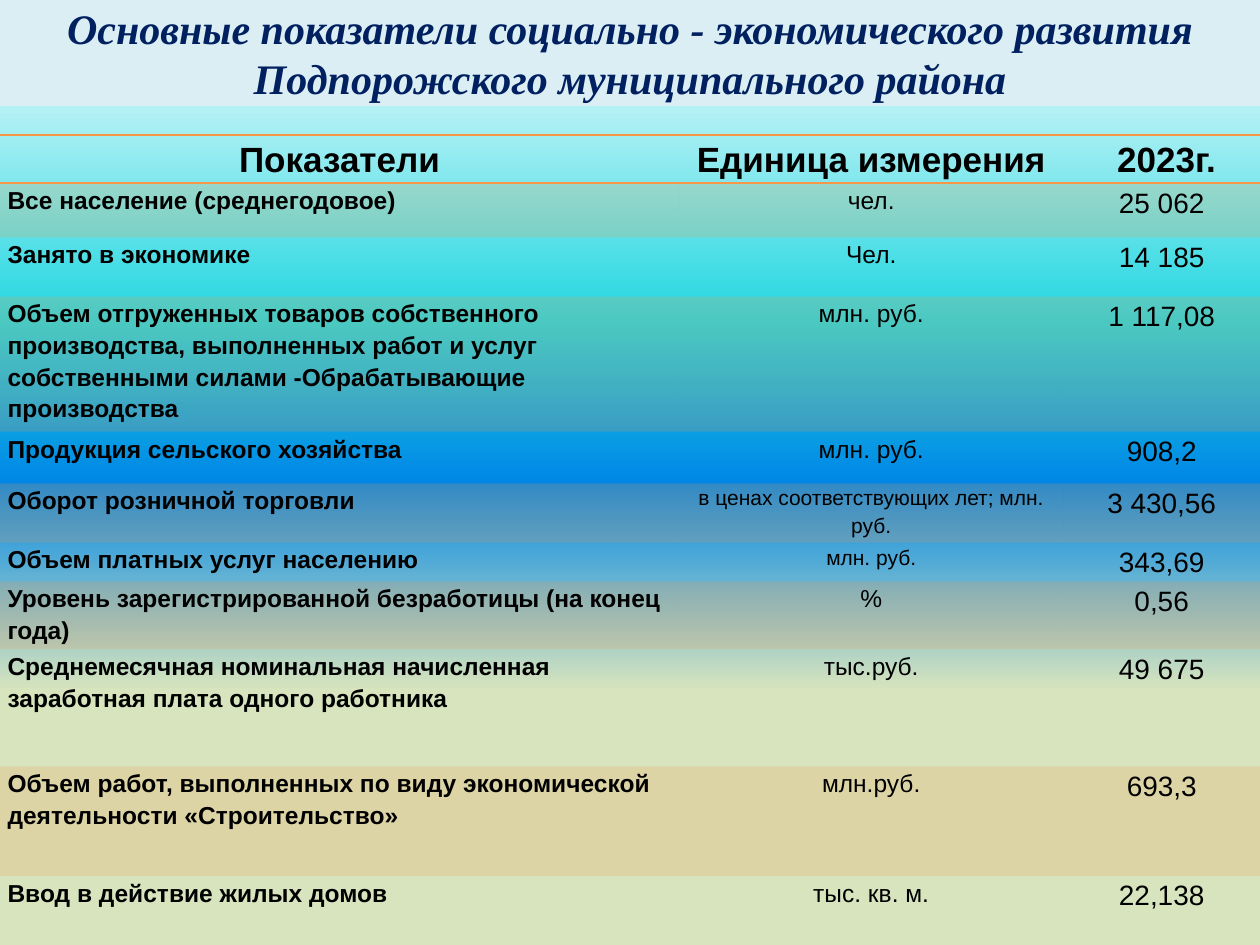
"""Build a slide with a table of socio-economic indicators of a district."""
from lxml.etree import SubElement
from pptx import Presentation
from pptx.dml.color import RGBColor
from pptx.enum.text import MSO_ANCHOR, PP_ALIGN
from pptx.oxml import parse_xml
from pptx.oxml.ns import nsdecls, qn
from pptx.util import Inches, Pt

COLORS = {"title_fill": "DBEEF4", "title": "002060", "text": "000000", "accent": "F79646"}
STOPS = [(0, "FFFFFF"), (34, "21D6E0"), (51, "0087E6"), (73, "D7E4BD")]
NO_STYLE = "{2D5ABB26-0587-4C30-8999-92F81FD0307C}"

TITLE = "Основные показатели социально - экономического развития Подпорожского муниципального района"
HEADER = ("Показатели", "Единица измерения", " 2023г.")
ROWS = [
    ("Все население (среднегодовое)", "чел.", "25 062"),
    ("Занято в экономике", "Чел.", "14 185"),
    ("Объем отгруженных товаров собственного производства, выполненных работ и услуг "
     "собственными силами -Обрабатывающие производства", "млн. руб.", "1 117,08"),
    ("Продукция сельского хозяйства", "млн. руб.", "908,2"),
    ("Оборот розничной торговли", "в ценах соответствующих лет; млн. руб.", "3 430,56"),
    ("Объем платных услуг населению", "млн. руб.", "343,69"),
    ("Уровень зарегистрированной безработицы (на конец года)", "%", "0,56"),
    ("Среднемесячная номинальная начисленная заработная плата одного работника",
     "тыс.руб.", "49 675"),
    ("Объем работ, выполненных по виду экономической деятельности «Строительство»",
     "млн.руб.", "693,3"),
    ("Ввод в действие жилых домов", "тыс. кв. м.", "22,138"),
]
WIDTHS = [5.39, 3.05, 1.56]
HEIGHTS = [0.36, 0.43, 0.47, 0.96, 0.41, 0.47, 0.31, 0.49, 0.93, 0.87, 1]
TABLE_TOP = 1.07
SMALL_UNIT_ROWS = (5, 6)

TITLE_FONT = {"name": "Times New Roman", "size": Pt(24), "bold": True, "italic": True}
HEADER_FONT = {"name": "Arial", "size": Pt(20), "bold": True}
COLUMN_FONTS = [
    {"name": "Arial", "size": Pt(14), "bold": True},
    {"name": "Arial", "size": Pt(14), "bold": False},
    {"name": "Arial", "size": Pt(16), "bold": False},
]
CELL_FORMAT = {"margin_left": Inches(0.06), "margin_right": Inches(0.06),
               "margin_top": 0, "margin_bottom": 0, "vertical_anchor": MSO_ANCHOR.TOP}


def apply(target, values):
    for name, value in values.items():
        setattr(target, name, value)


def write(tf, text, font, color, paragraph):
    p = tf.paragraphs[0]
    apply(p, paragraph)
    r = p.add_run()
    r.text = text
    apply(r.font, font)
    r.font.color.rgb = RGBColor.from_string(COLORS[color])


def paint_background(s):
    fill = s.background.fill
    fill.gradient()
    fill.gradient_angle = 270
    stops = s.background._cSld.find(".//" + qn("a:gsLst"))
    for old in list(stops):
        stops.remove(old)
    for position, color in STOPS:
        stop = SubElement(stops, qn("a:gs"), pos=str(position * 1000))
        SubElement(stop, qn("a:srgbClr"), val=color)


def add_title(s, width):
    sp = s.shapes.add_textbox(0, 0, width, Inches(0.84))
    sp.fill.solid()
    sp.fill.fore_color.rgb = RGBColor.from_string(COLORS["title_fill"])
    tf = sp.text_frame
    apply(tf, {"word_wrap": True, "vertical_anchor": MSO_ANCHOR.MIDDLE})
    write(tf, TITLE, TITLE_FONT, "title", {"alignment": PP_ALIGN.CENTER, "space_after": Pt(10)})


def fill_cell(cell, banded):
    if not banded:
        cell.fill.background()
        return
    cell.fill.solid()
    cell.fill.fore_color.rgb = RGBColor.from_string(COLORS["accent"])
    color = cell._tc.tcPr.find(".//" + qn("a:srgbClr"))
    SubElement(color, qn("a:alpha"), val="20000")


def add_border(cell, side):
    cell._tc.tcPr.insert(0, parse_xml(
        f'<a:{side} {nsdecls("a")} w="12700"><a:solidFill>'
        f'<a:srgbClr val="{COLORS["accent"]}"/></a:solidFill></a:{side}>'))


def add_indicators(s, width):
    data = [HEADER] + ROWS
    last = len(data) - 1
    frame = s.shapes.add_table(len(data), len(WIDTHS), 0, Inches(TABLE_TOP),
                               width, Inches(sum(HEIGHTS)))
    table = frame.table
    apply(table, {"first_row": False, "horz_banding": False})
    table._tbl.tblPr.find(qn("a:tableStyleId")).text = NO_STYLE
    for column, size in zip(table.columns, WIDTHS):
        column.width = Inches(size)
    for i, (row, size, texts) in enumerate(zip(table.rows, HEIGHTS, data)):
        row.height = Inches(size)
        for j, (cell, text) in enumerate(zip(row.cells, texts)):
            apply(cell, CELL_FORMAT)
            fill_cell(cell, i % 2 == 1)
            font = COLUMN_FONTS[j] if i else HEADER_FONT
            if j == 1 and i in SMALL_UNIT_ROWS:
                font = {**font, "size": Pt(12)}
            align = PP_ALIGN.LEFT if i and j == 0 else PP_ALIGN.CENTER
            write(cell.text_frame, text, font, "text",
                  {"alignment": align, "line_spacing": 1.15})
            if i in (0, last):
                add_border(cell, "lnB")
            if i == 0:
                add_border(cell, "lnT")


def main():
    prs = Presentation()
    apply(prs, {"slide_width": Inches(10), "slide_height": Inches(7.5)})
    s = prs.slides.add_slide(prs.slide_layouts[6])
    paint_background(s)
    add_title(s, prs.slide_width)
    add_indicators(s, prs.slide_width)
    prs.save("out.pptx")


if __name__ == "__main__":
    main()
